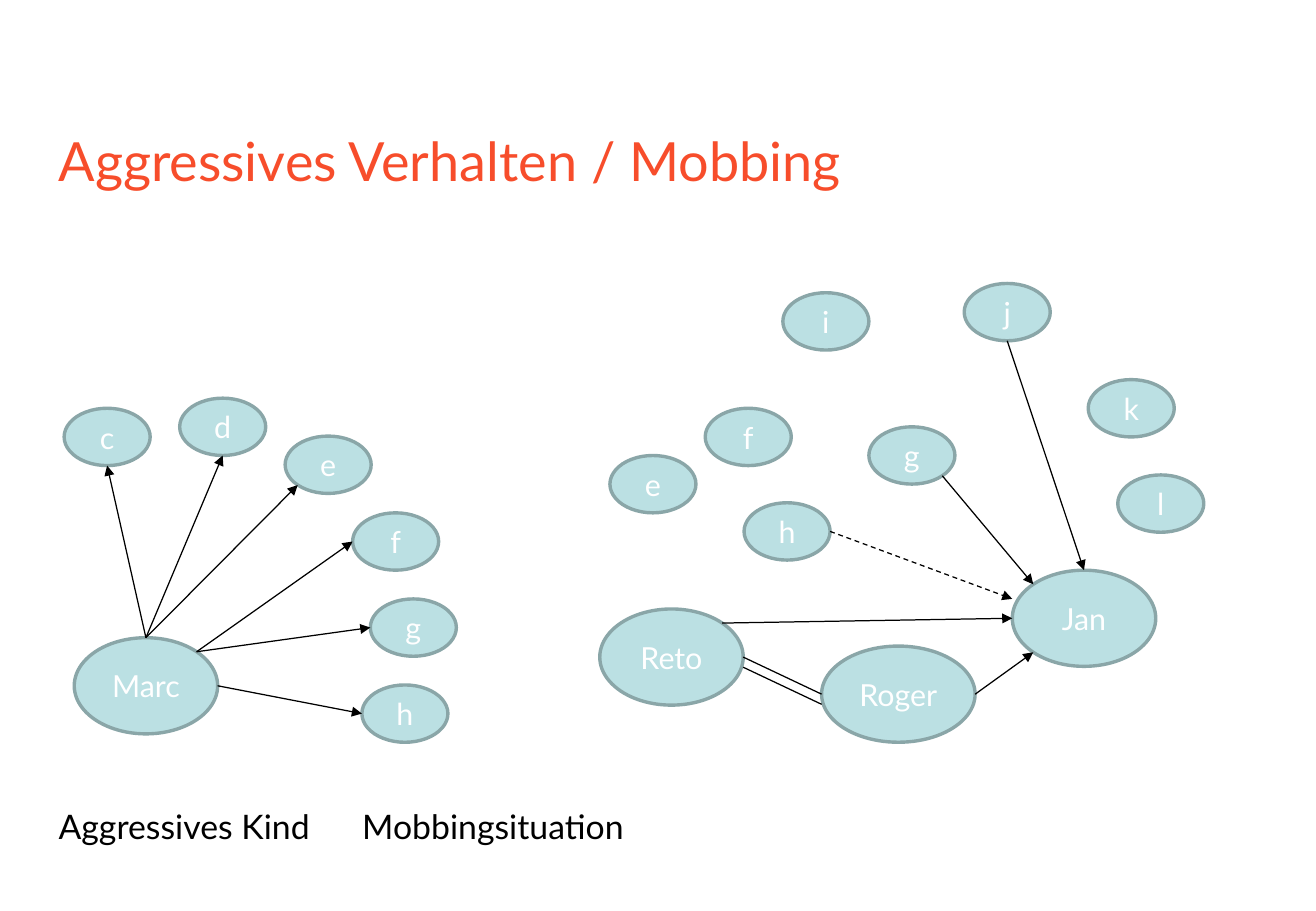
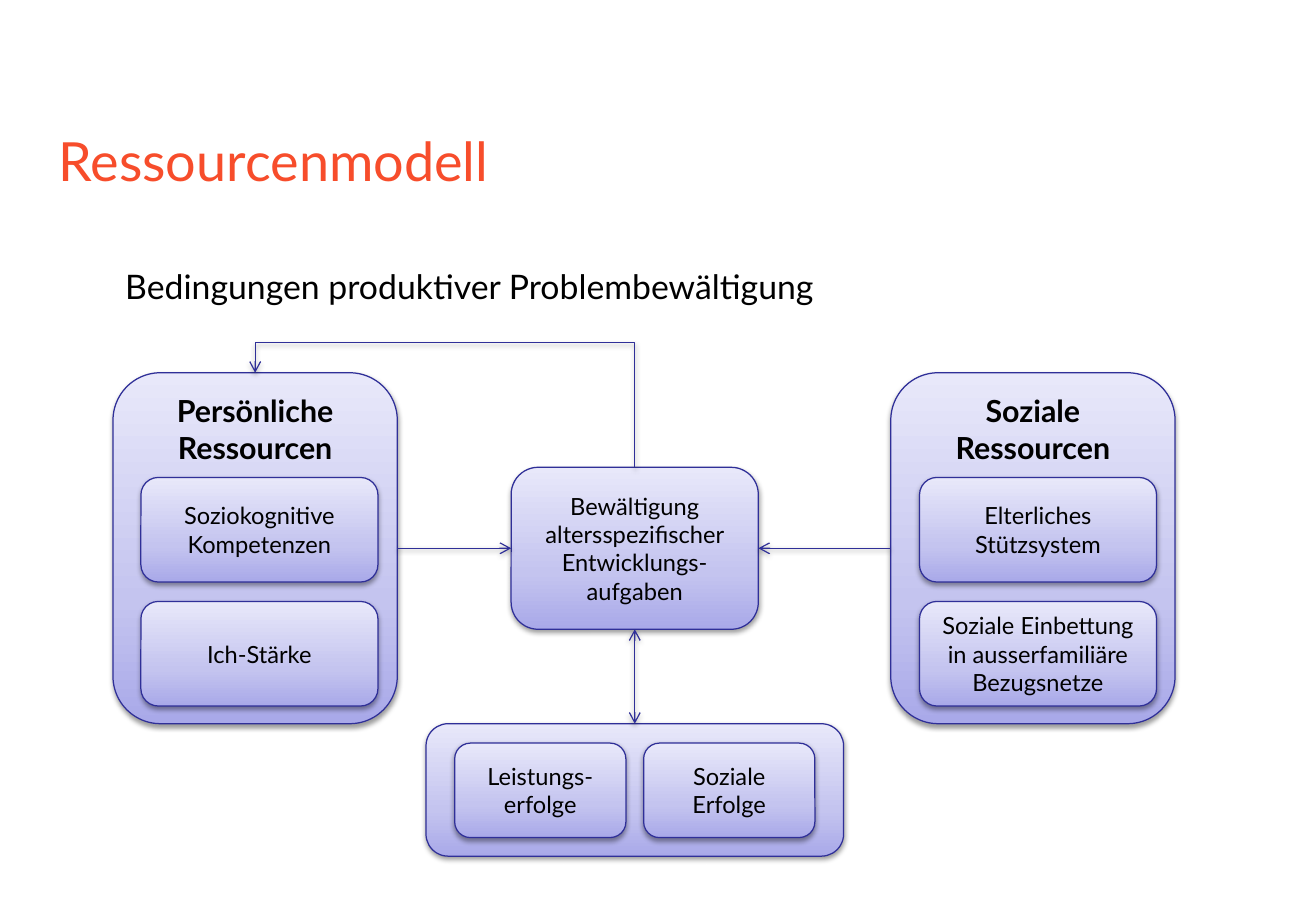
import copy
import math

import lxml.etree
import pptx
import pptx.dml.color
import pptx.enum.dml
import pptx.enum.shapes
import pptx.enum.text
import pptx.oxml.ns
import pptx.util

Pt = pptx.util.Pt
qn = pptx.oxml.ns.qn
ANCHOR = pptx.enum.text.MSO_ANCHOR
ALIGN = pptx.enum.text.PP_ALIGN
SHAPES = pptx.enum.shapes.MSO_SHAPE
CONNECTORS = pptx.enum.shapes.MSO_CONNECTOR

FONT = "Lato"
ORANGE, BLACK, WHITE = "F74D2B", "000000", "FFFFFF"
TEAL, TEAL_EDGE, INDIGO = "BBE0E3", "8AA6A8", "2F2F98"
LAVENDER = [(0, "A9A9E9"), (0.35, "C4C4EF"), (1, "E8E8FA")]
TOP, LEFT, BOTTOM, RIGHT = range(4)
CHILD, PERSON = (51, 34), (85, 57)
DIRECTIONS = {"n": 270, "ne": 315, "e": 0, "se": 45, "s": 90, "sw": 135, "w": 180, "nw": 225}


def rgb(value):
    return pptx.dml.color.RGBColor.from_string(value)


def add_xml(parent, tag, **attributes):
    return lxml.etree.SubElement(parent, qn(tag), attributes)


def write(frame, text, size, color, align, anchor, bold=False):
    frame.text = text
    frame.word_wrap = True
    frame.auto_size = pptx.enum.text.MSO_AUTO_SIZE.NONE
    frame.vertical_anchor = anchor
    paragraph = frame.paragraphs[0]
    paragraph.alignment = align
    for run in paragraph.runs:
        run.font.name = FONT
        run.font.size = Pt(size)
        run.font.bold = bold
        run.font.color.rgb = rgb(color)
    return paragraph


def place(shape, left, top, width, height):
    shape.left, shape.top, shape.width, shape.height = map(Pt, (left, top, width, height))


def new_slide(deck, title):
    slide = deck.slides.add_slide(deck.slide_layouts[1])
    heading = slide.shapes.title
    place(heading, 27.5, 60.5, 736.5, 57)
    write(heading.text_frame, title, 32, ORANGE, ALIGN.LEFT, ANCHOR.BOTTOM)
    return slide


def body_text(slide, text, box, anchor, tab=None):
    body = slide.placeholders[1]
    place(body, *box)
    paragraph = write(body.text_frame, text, 20, BLACK, ALIGN.LEFT, anchor)
    paragraph.space_before = Pt(0)
    properties = paragraph._p.get_or_add_pPr()
    properties.set("marL", "0")
    properties.set("indent", "0")
    add_xml(properties, "a:buNone")
    if tab:
        stops = add_xml(properties, "a:tabLst")
        add_xml(stops, "a:tab", pos=str(int(Pt(tab))), algn="l")


def oval(slide, name, left, top, size):
    shape = slide.shapes.add_shape(SHAPES.OVAL, *map(Pt, (left, top, *size)))
    shape.shadow.inherit = False
    shape.fill.solid()
    shape.fill.fore_color.rgb = rgb(TEAL)
    shape.line.color.rgb = rgb(TEAL_EDGE)
    shape.line.width = Pt(2)
    write(shape.text_frame, name, 18, WHITE, ALIGN.CENTER, ANCHOR.MIDDLE)
    return shape


def rim(shape, direction):
    angle = math.radians(DIRECTIONS[direction])
    x = shape.left + shape.width / 2 * (1 + math.cos(angle))
    y = shape.top + shape.height / 2 * (1 + math.sin(angle))
    return x / Pt(1), y / Pt(1)


def soft_shadow(effects):
    shadow = add_xml(effects, "a:outerShdw", blurRad=str(int(Pt(3.1))), dist=str(int(Pt(1.6))),
                     dir="5400000", rotWithShape="0")
    add_xml(add_xml(shadow, "a:srgbClr", val=BLACK), "a:alpha", val="38000")


def rounded_box(slide, text, left, top, width, height, heading=False):
    shape = slide.shapes.add_shape(SHAPES.ROUNDED_RECTANGLE, *map(Pt, (left, top, width, height)))
    shape.fill.gradient()
    shape.fill.gradient_angle = 90
    stop_list = shape._element.spPr.find(".//" + qn("a:gsLst"))
    stop_list.insert(1, copy.deepcopy(stop_list[0]))
    for stop, (position, color) in zip(shape.fill.gradient_stops, LAVENDER):
        stop.position = position
        stop.color.rgb = rgb(color)
    shape.line.color.rgb = rgb(INDIGO)
    shape.line.width = Pt(0.75)
    shape.shadow.inherit = False
    soft_shadow(shape._element.spPr.find(qn("a:effectLst")))
    if text:
        write(shape.text_frame, text, 18 if heading else 14, BLACK, ALIGN.CENTER,
              ANCHOR.TOP if heading else ANCHOR.MIDDLE, heading)
    return shape


def line(slide, start, end, color=BLACK, head=None, tail=None, dashed=False,
         shadow=False, kind=CONNECTORS.STRAIGHT):
    connector = slide.shapes.add_connector(kind, *map(Pt, (*start, *end)))
    connector.line.color.rgb = rgb(color)
    connector.line.width = Pt(0.75)
    if dashed:
        connector.line.dash_style = pptx.enum.dml.MSO_LINE.DASH
    stroke = connector.line._get_or_add_ln()
    for tag, arrow in (("a:headEnd", head), ("a:tailEnd", tail)):
        if arrow:
            add_xml(stroke, tag, type=arrow)
    effects = add_xml(connector._element.spPr, "a:effectLst")
    if shadow:
        soft_shadow(effects)
    return connector


def join(slide, source, source_side, target, target_side, kind=CONNECTORS.STRAIGHT, head=None):
    connector = line(slide, (0, 0), (0, 0), INDIGO, head, "arrow", shadow=True, kind=kind)
    connector.begin_connect(source, source_side)
    connector.end_connect(target, target_side)
    return connector


def loop_over_top(slide, source, target, rise):
    connector = join(slide, source, TOP, target, TOP, CONNECTORS.ELBOW)
    start_x, end_x = (box.left + box.width // 2 for box in (source, target))
    drop, span = source.top - target.top, start_x - end_x
    connector.left = (start_x + end_x - drop) // 2
    connector.top = (source.top + target.top - span) // 2
    connector.width, connector.height = drop, span
    frame = connector._element.spPr.xfrm
    frame.flipH, frame.flipV, frame.rot = False, True, 270
    ratio = round(100000 * (1 + Pt(rise) / drop))
    guides = connector._element.spPr.find(".//" + qn("a:avLst"))
    add_xml(guides, "a:gd", name="adj1", fmla=f"val {ratio}")


def bullying_slide(deck):
    slide = new_slide(deck, "Aggressives Verhalten / Mobbing")
    body_text(slide, "Aggressives Kind\tMobbingsituation", (27.5, 134, 736.5, 371),
              ANCHOR.BOTTOM, tab=359.5)

    marc = oval(slide, "Marc", 44, 378, PERSON)
    for name, left, top, leaving, arriving in [
        ("c", 38, 242, "n", "s"), ("d", 106.5, 236, "n", "s"), ("e", 169, 258.5, "n", "sw"),
        ("f", 209, 304, "ne", "w"), ("g", 219.5, 355, "ne", "w"), ("h", 214.5, 406, "e", "w"),
    ]:
        child = oval(slide, name, left, top, CHILD)
        line(slide, rim(marc, leaving), rim(child, arriving), tail="triangle")

    reto = oval(slide, "Reto", 355.5, 361, PERSON)
    roger = oval(slide, "Roger", 487, 383, (91, 57))
    jan = oval(slide, "Jan", 600, 338, PERSON)
    group = {name: oval(slide, name, left, top, CHILD) for name, left, top in [
        ("e", 361.5, 270), ("f", 418, 242), ("h", 441, 298), ("i", 464, 173.5),
        ("j", 571.5, 168), ("k", 645, 225), ("g", 515, 253), ("l", 662.5, 281.5),
    ]}
    for attacker, leaving, arriving in [
        (reto, "ne", "w"), (roger, "e", "sw"), (group["g"], "se", "nw"), (group["j"], "s", "n"),
    ]:
        line(slide, rim(attacker, leaving), rim(jan, arriving), tail="triangle")
    line(slide, rim(group["h"], "e"), (600, 355), tail="triangle", dashed=True)
    for shift in (0, 6):
        (x1, y1), (x2, y2) = rim(reto, "e"), rim(roger, "w")
        line(slide, (x1, y1 + shift), (x2, y2 + shift))


def resources_slide(deck):
    slide = new_slide(deck, "Ressourcenmodell")
    body_text(slide, "Bedingungen produktiver Problembewältigung", (67, 154, 628, 34), ANCHOR.TOP)

    social = rounded_box(slide, "Soziale Ressourcen", 528, 221, 168.5, 208, heading=True)
    successes = rounded_box(slide, "", 252.5, 429, 247.5, 78.5)
    personal = rounded_box(slide, "Persönliche Ressourcen", 67, 221, 168.5, 208, heading=True)
    for left, resources in [
        (83.5, ("Soziokognitive Kompetenzen", "Ich-Stärke")),
        (545, ("Elterliches Stützsystem", "Soziale Einbettung in ausserfamiliäre Bezugsnetze")),
    ]:
        for row, resource in enumerate(resources):
            rounded_box(slide, resource, left, 283 + 73.5 * row, 140.5, 62)
    for column, success in enumerate(("Leistungs-erfolge", "Soziale Erfolge")):
        rounded_box(slide, success, 269.5 + 112 * column, 440.5, 101.5, 56)
    coping = rounded_box(slide, "Bewältigung altersspezifischer Entwicklungs-aufgaben",
                         303, 277, 146.5, 96)

    loop_over_top(slide, coping, personal, 18)
    join(slide, personal, RIGHT, coping, LEFT)
    join(slide, social, LEFT, coping, RIGHT)
    join(slide, coping, BOTTOM, successes, TOP, head="arrow")


def main():
    deck = pptx.Presentation()
    deck.slide_width, deck.slide_height = Pt(780), Pt(540)
    bullying_slide(deck)
    resources_slide(deck)
    deck.save("out.pptx")


if __name__ == "__main__":
    main()
